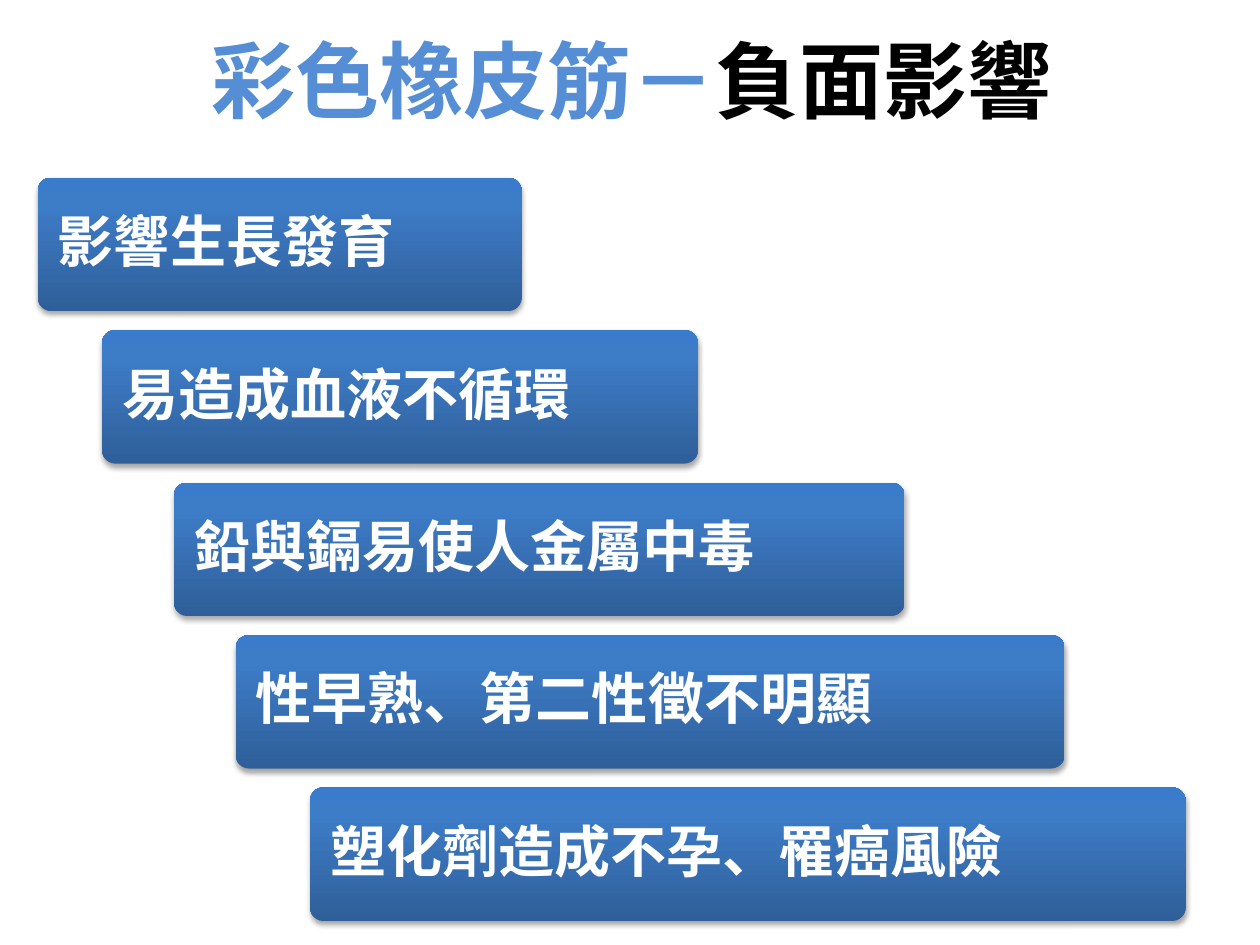
from copy import deepcopy

from lxml import etree
from pptx import Presentation
from pptx import util as u
from pptx.dml.color import RGBColor
from pptx.enum import shapes, text
from pptx.oxml import ns

FONT = "Noto Sans CJK SC"
COLORS = {
    "accent": "558ED5",
    "black": "000000",
    "white": "FFFFFF",
    "bar_bottom": "2F5F99",
    "bar_middle": "3D7CC7",
    "bar_top": "3A7CCB",
}

# Left edge, width and wording of each step, in inches
EFFECTS = [
    (0.30, 3.84, "影響生長發育"),
    (0.81, 4.73, "易造成血液不循環"),
    (1.38, 5.80, "鉛與鎘易使人金屬中毒"),
    (1.87, 6.58, "性早熟、第二性徵不明顯"),
    (2.46, 6.95, "塑化劑造成不孕、罹癌風險"),
]
STEP_TOP, STEP_PITCH, STEP_HEIGHT = 1.41, 1.21, 1.06


def color(name):
    return RGBColor.from_string(COLORS[name])


def add_span(para, words, size, color_name):
    span = para.add_run()
    span.text = words
    span.font.size = u.Pt(size)
    span.font.bold = True
    span.font.name = FONT
    span.font.color.rgb = color(color_name)
    # East Asian glyphs take their own typeface setting
    etree.SubElement(span.font._element, ns.qn("a:ea"), typeface=FONT)


def fill_gradient(shape):
    shape.fill.gradient()
    shape.fill.gradient_angle = 90
    stop_list = shape._element.spPr.find(".//" + ns.qn("a:gsLst"))
    stop_list.append(deepcopy(stop_list[-1]))
    stops = zip(shape.fill.gradient_stops, (0, 0.8, 1),
                ("bar_bottom", "bar_middle", "bar_top"))
    for stop, position, name in stops:
        stop.position = position
        stop.color.rgb = color(name)


def add_shadow(shape):
    shape.shadow.inherit = False
    effects = shape._element.spPr.find(ns.qn("a:effectLst"))
    shadow = etree.SubElement(
        effects, ns.qn("a:outerShdw"), blurRad=str(u.Pt(3.1)),
        dist=str(u.Pt(1.8)), dir="5400000", rotWithShape="0")
    tint = etree.SubElement(shadow, ns.qn("a:srgbClr"), val=COLORS["black"])
    etree.SubElement(tint, ns.qn("a:alpha"), val="35000")


def place_title(page, left, top, width, height):
    title = page.shapes.title
    title.left, title.top, title.width, title.height = left, top, width, height
    title.text_frame.vertical_anchor = text.MSO_ANCHOR.MIDDLE
    para = title.text_frame.paragraphs[0]
    para.alignment = text.PP_ALIGN.CENTER
    add_span(para, "彩色橡皮筋－", 48, "accent")
    add_span(para, "負面影響", 48, "black")


def add_step(page, words, left, top, width, height):
    box = page.shapes.add_shape(
        shapes.MSO_SHAPE.ROUNDED_RECTANGLE, left, top, width, height)
    box.adjustments[0] = 0.1
    fill_gradient(box)
    box.line.fill.background()
    add_shadow(box)

    frame = box.text_frame
    frame.word_wrap = True
    frame.vertical_anchor = text.MSO_ANCHOR.MIDDLE
    frame.margin_left = frame.margin_right = u.Inches(0.13)
    frame.margin_top = frame.margin_bottom = u.Inches(0.13)
    para = frame.paragraphs[0]
    para.alignment = text.PP_ALIGN.LEFT
    para.line_spacing = 0.9
    add_span(para, words, 32, "white")


def main():
    deck = Presentation()
    deck.slide_width, deck.slide_height = u.Inches(10), u.Inches(7.5)
    page = deck.slides.add_slide(deck.slide_layouts.get_by_name("Title Only"))

    # Title
    place_title(page, u.Inches(0.93), u.Inches(0), u.Inches(8.17), u.Inches(1.25))

    # Staircase of effects
    for row, (left, width, words) in enumerate(EFFECTS):
        add_step(page, words, u.Inches(left),
                 u.Inches(STEP_TOP + row * STEP_PITCH),
                 u.Inches(width), u.Inches(STEP_HEIGHT))

    deck.save("out.pptx")


if __name__ == "__main__":
    main()
